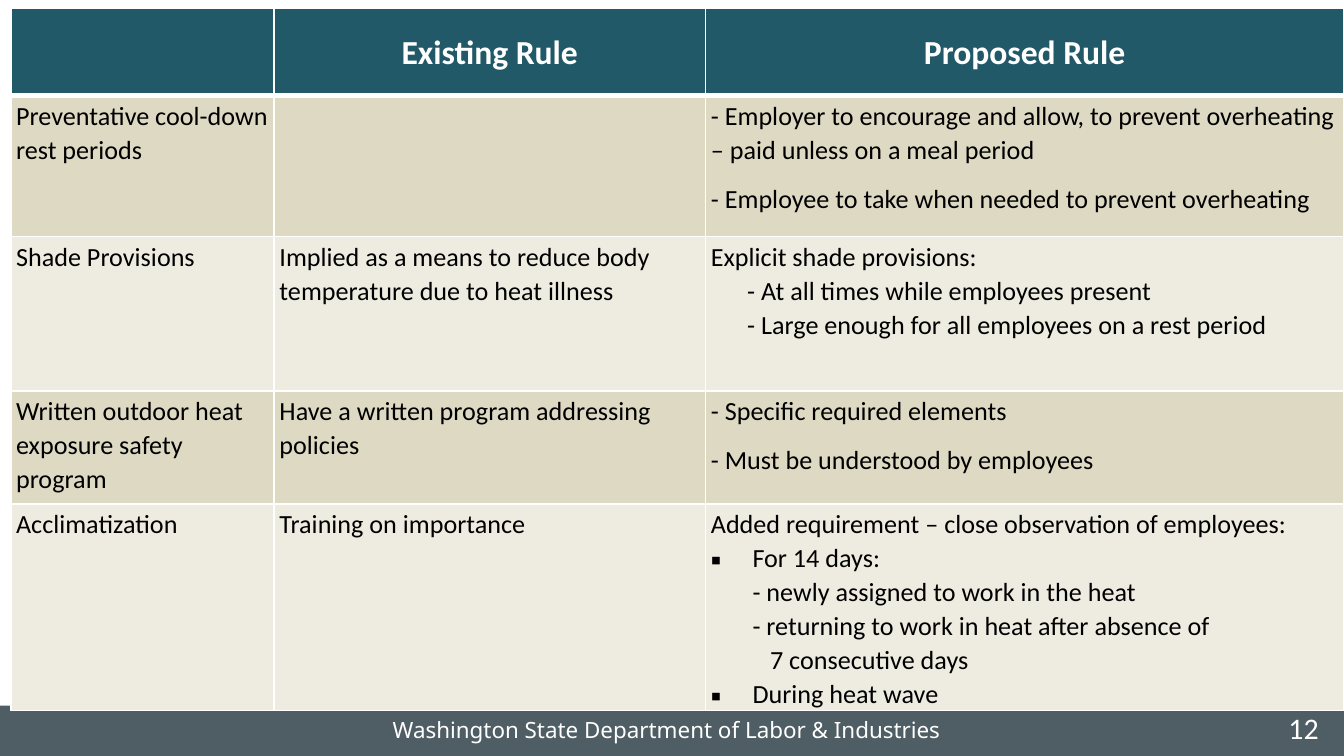
from lxml.etree import SubElement
from pptx import Presentation
from pptx.dml.color import RGBColor
from pptx.enum.shapes import MSO_SHAPE
from pptx.enum.text import MSO_ANCHOR, PP_ALIGN
from pptx.oxml.ns import qn
from pptx.util import Inches, Pt

COLORS = {
    "white": "FFFFFF",
    "black": "000000",
    "footer": "4F5E64",
    "header": "215968",
    "tan": "DDD9C3",
    "cream": "EEECE1",
}
COLUMNS = [1.96, 3.21, 4.75]
ROW_HEIGHTS = [0.65, 1.05, 1.15, 0.84, 1.31]
HEADINGS = ["", "Existing Rule", "Proposed Rule"]
BULLET = "▪"

# Each cell lists its paragraphs: plain text, or (text, left indent, bullet)
ROWS = [
    [["Preventative cool-down rest periods"],
     [],
     ["- Employer to encourage and allow, to prevent overheating – paid unless on a meal period",
      "- Employee to take when needed to prevent overheating"]],
    [["Shade Provisions"],
     ["Implied as a means to reduce body temperature due to heat illness"],
     ["Explicit shade provisions:",
      ("- At all times while employees present", 0.27, None),
      ("- Large enough for all employees on a rest period", 0.27, None)]],
    [["Written outdoor heat exposure safety program"],
     ["Have a written program addressing policies"],
     ["- Specific required elements", "- Must be understood by employees"]],
    [["Acclimatization"],
     ["Training on importance"],
     ["Added requirement – close observation of employees:",
      ("For 14 days:", 0.31, BULLET),
      ("- newly assigned to work in the heat", 0.31, None),
      ("- returning to work in heat after absence of", 0.31, None),
      ("7 consecutive days", 0.44, None),
      ("During heat wave", 0.31, BULLET)]],
]


class SlideBuilder:
    font = "Calibri"
    bullet_font = "Noto Sans"

    def __init__(self, slide):
        self.slide = slide

    def color(self, name):
        return RGBColor.from_string(COLORS[name])

    def style(self, p, size, color, align=PP_ALIGN.LEFT, font=None, bold=False):
        p.alignment = align
        p.font.name = font or self.font
        p.font.size = Pt(size)
        p.font.bold = bold
        p.font.color.rgb = self.color(color)

    def bar(self, x, y, w, h, color):
        sp = self.slide.shapes.add_shape(
            MSO_SHAPE.RECTANGLE, Inches(x), Inches(y), Inches(w), Inches(h))
        sp.shadow.inherit = False
        sp.fill.solid()
        sp.fill.fore_color.rgb = self.color(color)
        sp.line.fill.background()

    def text(self, x, y, w, h, text, size, align, font=None, spacing=1.0):
        sp = self.slide.shapes.add_textbox(Inches(x), Inches(y), Inches(w), Inches(h))
        tf = sp.text_frame
        tf.word_wrap = True
        tf.vertical_anchor = MSO_ANCHOR.MIDDLE
        p = tf.paragraphs[0]
        p.text = text
        p.line_spacing = spacing
        self.style(p, size, "white", align, font)

    def table(self, x, y, columns, heights):
        frame = self.slide.shapes.add_table(
            len(heights), len(columns), Inches(x), Inches(y),
            Inches(sum(columns)), Inches(sum(heights)))
        table = frame.table
        for column, width in zip(table.columns, columns):
            column.width = Inches(width)
        for row, height in zip(table.rows, heights):
            row.height = Inches(height)
        return table

    def borders(self, cell, top, bottom):
        tc_pr = cell._tc.get_or_add_tcPr()
        for side, width in zip("LRTB", (1, 1, top, bottom)):
            ln = SubElement(tc_pr, qn(f"a:ln{side}"), w=str(Pt(width)))
            fill = SubElement(ln, qn("a:solidFill"))
            SubElement(fill, qn("a:srgbClr"), val=COLORS["white"])

    def indent(self, p, left, bullet):
        p_pr = p._p.get_or_add_pPr()
        p_pr.set("marL", str(Inches(left)))
        p_pr.set("indent", str(-Inches(left) if bullet else 0))
        if bullet:
            SubElement(p_pr, qn("a:buFont"), typeface=self.bullet_font)
            SubElement(p_pr, qn("a:buChar"), char=bullet)

    def cell(self, cell, items, fill, size, color, align=PP_ALIGN.LEFT,
             bold=False, after=8, top=1, bottom=1):
        self.borders(cell, top, bottom)
        cell.fill.solid()
        cell.fill.fore_color.rgb = self.color(fill)
        cell.margin_left = cell.margin_right = Inches(0.04)
        cell.margin_top = cell.margin_bottom = Inches(0.02)
        tf = cell.text_frame
        for i, item in enumerate(items):
            text, left, bullet = (item, 0, None) if isinstance(item, str) else item
            p = tf.paragraphs[0] if i == 0 else tf.add_paragraph()
            p.text = text
            p.line_spacing = 1.07
            p.space_after = Pt(after)
            if left:
                self.indent(p, left, bullet)
            self.style(p, size, color, align, bold=bold)


def main():
    prs = Presentation()
    prs.slide_width = Inches(10)
    prs.slide_height = prs.slide_width * 9 // 16
    s = SlideBuilder(prs.slides.add_slide(prs.slide_layouts[6]))

    # Footer
    s.bar(0, 5.25, 10, 0.38, "footer")
    s.text(0.5, 5.23, 8.92, 0.34, "Washington State Department of Labor & Industries",
           12, PP_ALIGN.CENTER, "Noto Sans", 1.3)
    s.text(9.33, 5.23, 0.58, 0.37, "12", 16, PP_ALIGN.RIGHT)

    # Comparison table: header row
    table = s.table(0.08, 0.06, COLUMNS, ROW_HEIGHTS)
    for c, heading in enumerate(HEADINGS):
        cell = table.cell(0, c)
        cell.vertical_anchor = MSO_ANCHOR.MIDDLE
        s.cell(cell, [heading] if heading else [], "header", 18, "white",
               PP_ALIGN.CENTER, bold=True, bottom=3)

    # Comparison table: body rows in alternating shades
    for r, row in enumerate(ROWS, 1):
        for c, items in enumerate(row):
            has_list = any(not isinstance(item, str) for item in items)
            # Every cell of the shade row is set without space after
            after = 0 if has_list or r == 2 else 8
            s.cell(table.cell(r, c), items, "tan" if r % 2 else "cream", 14, "black",
                   after=after, top=3 if r == 1 else 1)

    prs.save("out.pptx")


if __name__ == "__main__":
    main()
